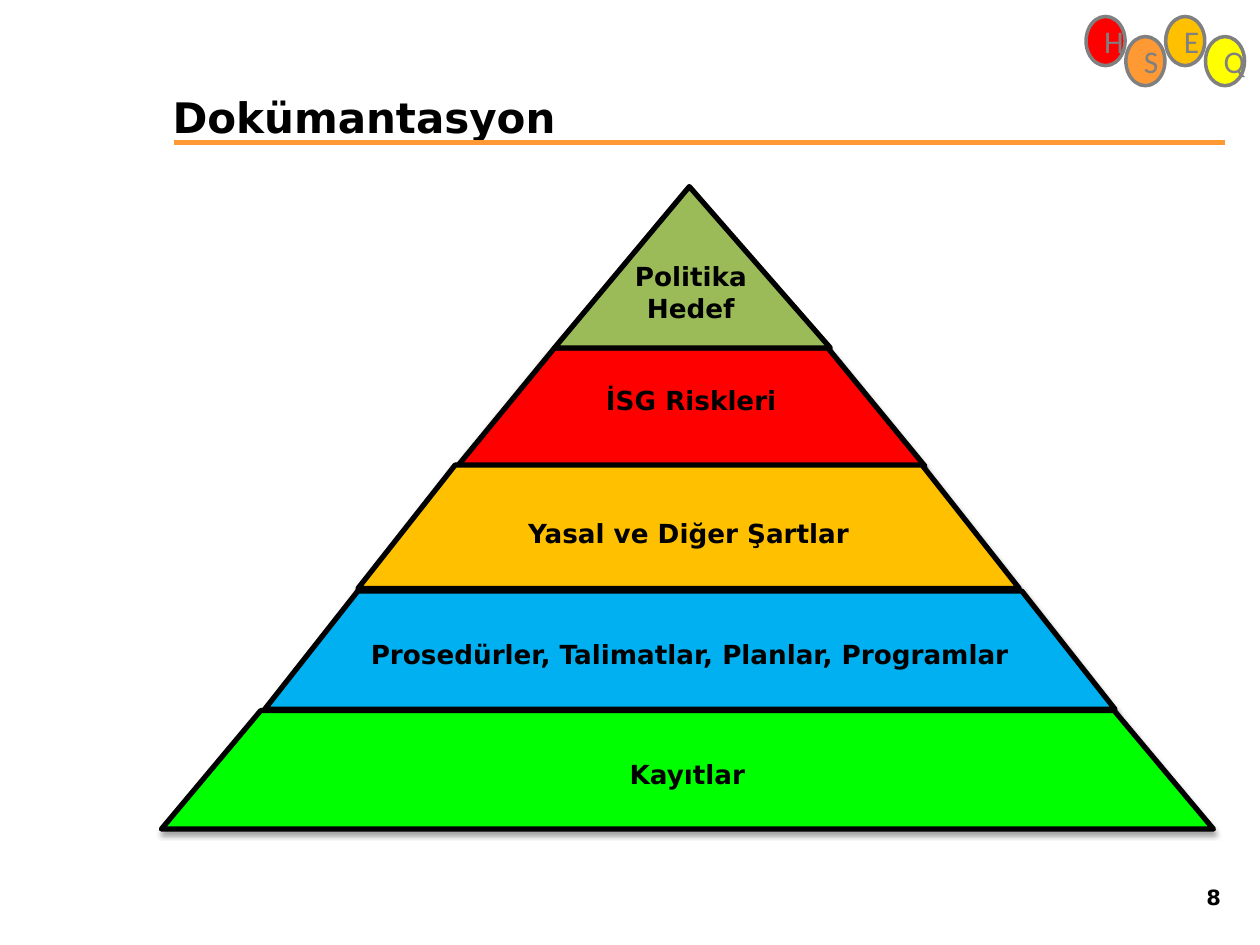
import pptx
import pptx.util
import pptx.dml.color
import pptx.enum.shapes
import pptx.enum.text
import pptx.oxml.ns
import lxml.etree

Pt = pptx.util.Pt
SHAPE = pptx.enum.shapes.MSO_SHAPE
ALIGN = pptx.enum.text.PP_ALIGN
HEADING_FONT = "DejaVu Sans"
EMBLEM_FONT = "Calibri"
LINE_HEIGHT = 17.5

# Level: text, preset, left, top, width, height, adjustment, fill,
# lines of space kept below the text, shadow (opacity %, distance) or None
LEVELS = [
    ("İSG Riskleri", SHAPE.TRAPEZOID, 261.4, 198.7, 267.1, 67.7, 0.821, "FF0000", 1, (38, 1.6)),
    ("Politika\nHedef", SHAPE.ISOSCELES_TRIANGLE, 316.8, 106.6, 157.7, 92.2, 0.489, "9BBB59", 1, None),
    ("Yasal ve Diğer Şartlar", SHAPE.TRAPEZOID, 204.5, 265.7, 378, 70.6, 0.788, "FFC000", 0, (35, 1.8)),
    ("Prosedürler, Talimatlar, Planlar, Programlar", SHAPE.TRAPEZOID,
     151.2, 337.7, 486, 67.7, 0.788, "00B0F0", 0, (35, 1.8)),
    ("Kayıtlar", SHAPE.TRAPEZOID, 92.2, 406.1, 601.2, 67.7, 0.838, "00FF00", 0, (35, 1.8)),
]
EMBLEM = [("H", "FF0000"), ("S", "FF9933"), ("E", "FFC000"), ("Q", "FFFF00")]


def color(value):
    return pptx.dml.color.RGBColor.from_string(value)


def write(frame, text, size, font, ink, align, bold=True):
    frame.text = text
    frame.word_wrap = True
    frame.vertical_anchor = pptx.enum.text.MSO_ANCHOR.MIDDLE
    for paragraph in frame.paragraphs:
        paragraph.alignment = align
        for run in paragraph.runs:
            run.font.size = Pt(size)
            run.font.name = font
            run.font.bold = bold
            run.font.color.rgb = color(ink)


def add_outlined(slide, preset, box, fill, outline, weight):
    shape = slide.shapes.add_shape(preset, *map(Pt, box))
    shape.shadow.inherit = False
    shape.fill.solid()
    shape.fill.fore_color.rgb = color(fill)
    shape.line.color.rgb = color(outline)
    shape.line.width = Pt(weight)
    return shape


def add_shadow(shape, opacity, distance):
    qn = pptx.oxml.ns.qn
    effects = shape._element.spPr.find(qn("a:effectLst"))
    shadow = lxml.etree.SubElement(
        effects, qn("a:outerShdw"), blurRad=str(Pt(3.1)), dist=str(Pt(distance)),
        dir="5400000", rotWithShape="0")
    black = lxml.etree.SubElement(shadow, qn("a:srgbClr"), val="000000")
    lxml.etree.SubElement(black, qn("a:alpha"), val=str(opacity * 1000))


def add_level(slide, text, preset, left, top, width, height, adjustment, fill, lines_below, shadow):
    level = add_outlined(slide, preset, (left, top, width, height), fill, "000000", 3)
    level.adjustments[0] = adjustment
    if shadow:
        add_shadow(level, *shadow)
    frame = level.text_frame
    write(frame, text, 15, HEADING_FONT, "000000", ALIGN.CENTER)
    frame.margin_left = frame.margin_right = 0
    frame.margin_bottom = Pt(3.6 + lines_below * LINE_HEIGHT)


def add_emblem(slide):
    for index, (letter, fill) in enumerate(EMBLEM):
        box = (620.6 + index * 22.75, 20.9 if index % 2 else 9.4, 22.3, 28.1)
        disc = add_outlined(slide, SHAPE.OVAL, box, fill, "808080", 2)
        write(disc.text_frame, letter, 18, EMBLEM_FONT, "808080", ALIGN.CENTER, bold=False)


def add_rule(slide):
    rule = slide.shapes.add_connector(
        pptx.enum.shapes.MSO_CONNECTOR.STRAIGHT, Pt(99.4), Pt(81.4), Pt(699.8), Pt(81.4))
    rule.line.color.rgb = color("FF9933")
    rule.line.width = Pt(3)
    lxml.etree.SubElement(rule._element.spPr, pptx.oxml.ns.qn("a:effectLst"))


def set_title(slide, text):
    title = slide.shapes.title
    title.left, title.top, title.width, title.height = map(Pt, (91.4, 41.8, 598.3, 49.7))
    write(title.text_frame, text, 24, HEADING_FONT, "000000", ALIGN.LEFT)


def add_page_number(slide, number):
    box = slide.shapes.add_textbox(*map(Pt, (620.6, 498.2, 84.2, 28.8)))
    write(box.text_frame, number, 12, HEADING_FONT, "000000", ALIGN.RIGHT)


def main():
    deck = pptx.Presentation()
    deck.slide_width, deck.slide_height = Pt(720), Pt(540)
    slide = deck.slides.add_slide(deck.slide_layouts[5])

    # Heading area
    add_rule(slide)
    add_emblem(slide)
    set_title(slide, "Dokümantasyon")

    # Pyramid
    for level in LEVELS:
        add_level(slide, *level)

    # Footer
    add_page_number(slide, "8")
    deck.save("out.pptx")


if __name__ == "__main__":
    main()
